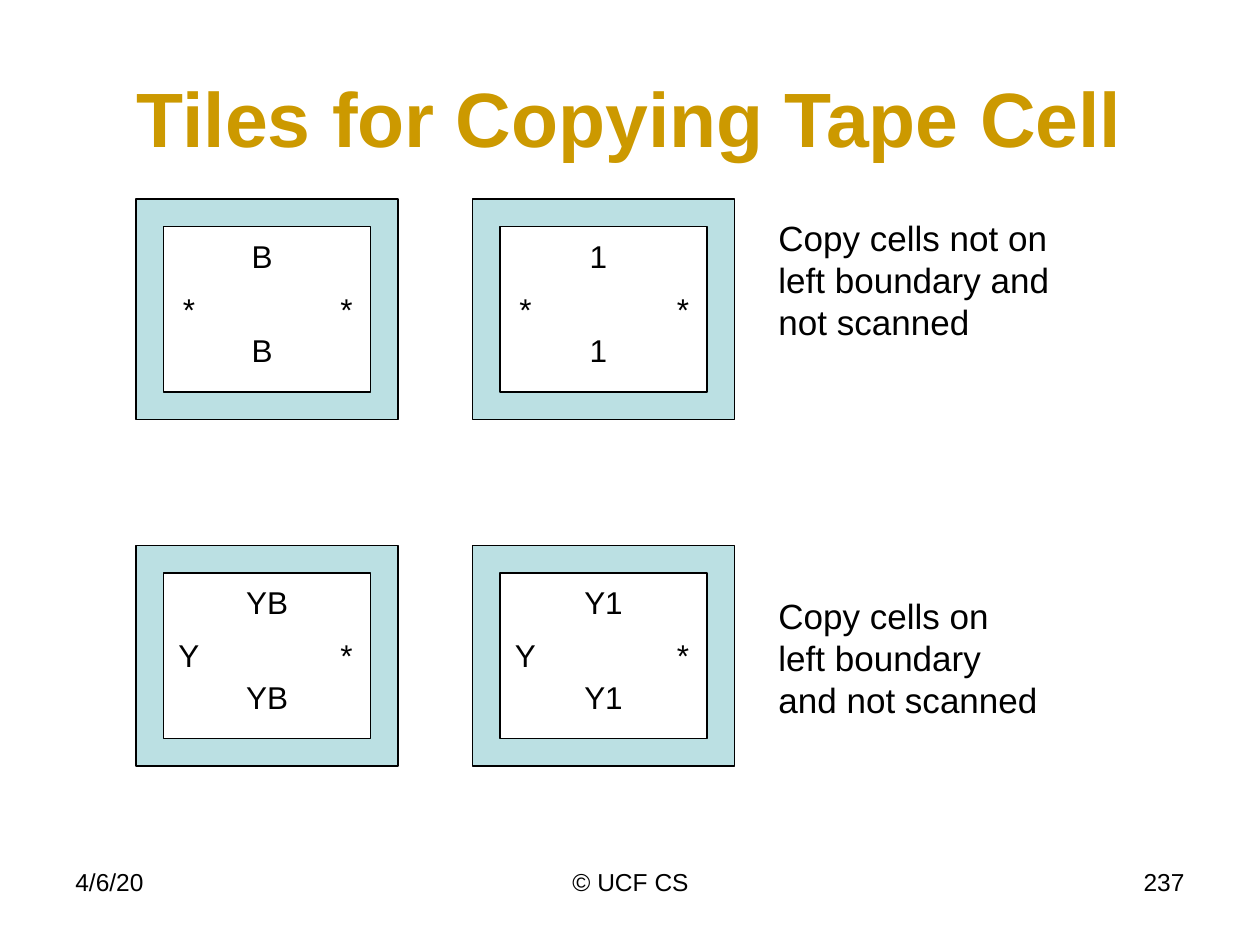
from pptx import Presentation
from pptx.dml.color import RGBColor
from pptx.enum.shapes import MSO_SHAPE
from pptx.enum.text import MSO_ANCHOR, MSO_AUTO_SIZE, PP_ALIGN
from pptx.util import Inches, Pt

GOLD = RGBColor(0xCC, 0x99, 0x00)
PALE_TEAL = RGBColor(0xBB, 0xE0, 0xE3)
BLACK = RGBColor(0, 0, 0)
LEFT, CENTER, RIGHT = PP_ALIGN.LEFT, PP_ALIGN.CENTER, PP_ALIGN.RIGHT
FRAME = MSO_SHAPE.FRAME
MIDDLE = MSO_ANCHOR.MIDDLE
NO_FIT, GROW = MSO_AUTO_SIZE.NONE, MSO_AUTO_SIZE.SHAPE_TO_FIT_TEXT
TITLE_ONLY = 5

TILE_COLUMNS = (1.08, 3.75)
# Tile top, side marks, labels, offset and width of the labels, note
TILE_ROWS = (
    (1.58, ("*", "*"), ("B", "1"), (0.75, 0.5),
     (6.08, 1.67, 2.44, 1.11),
     ("Copy cells not on", "left boundary and \vnot scanned")),
    (4.33, ("Y", "*"), ("YB", "Y1"), (0.25, 1.58),
     (6.08, 4.67, 2.27, 1.11),
     ("Copy cells on", "left boundary", "and not scanned")),
)
FOOTER_PARTS = (
    (0, 2.33, "4/6/20", LEFT),
    (2.92, 3.17, "© UCF CS", CENTER),
    (6.67, 2.33, "237", RIGHT),
)


def write_lines(frame, lines, size, align, color=BLACK, bold=False):
    font_format = {"name": "Arial", "size": Pt(size), "bold": bold}
    for index, line in enumerate(lines):
        paragraph = frame.add_paragraph() if index else frame.paragraphs[0]
        paragraph.text = line
        paragraph.alignment = align
        for key, value in font_format.items():
            setattr(paragraph.font, key, value)
        paragraph.font.color.rgb = color


def add_text(slide, box, lines, size, align, wrap=True, fit=GROW):
    frame = slide.shapes.add_textbox(*map(Inches, box)).text_frame
    frame.word_wrap = wrap
    frame.auto_size = fit
    write_lines(frame, lines, size, align)


def add_title(slide, box, text):
    title = slide.shapes.title
    edges = ("left", "top", "width", "height")
    for edge, length in zip(edges, box):
        setattr(title, edge, Inches(length))
    title.text_frame.auto_size = NO_FIT
    title.text_frame.vertical_anchor = MIDDLE
    write_lines(title.text_frame, [text], 44, CENTER, GOLD, bold=True)


def add_tile(slide, box, sides, label, label_span):
    """Draw a frame with marks on its sides and one label above and below."""
    left, top, _, _ = box
    border = slide.shapes.add_shape(FRAME, *map(Inches, box))
    border.shadow.inherit = False
    border.fill.solid()
    border.fill.fore_color.rgb = PALE_TEAL
    border.line.color.rgb = BLACK
    border.line.width = Pt(0.75)

    label_dx, label_width = label_span
    marks = (
        (label_dx, 0.25, label_width, label),
        (1.42, 0.67, 0.5, sides[1]),
        (0.17, 0.67, 0.5, sides[0]),
        (label_dx, 1, label_width, label),
    )
    for dx, dy, width, mark in marks:
        add_text(slide, (left + dx, top + dy, width, 0.5), [mark], 18, CENTER)


def add_footer(slide, box):
    left, top, _, height = box
    for dx, width, text, align in FOOTER_PARTS:
        add_text(slide, (left + dx, top, width, height), [text], 14, align,
                 fit=NO_FIT)


def main():
    prs = Presentation()
    prs.slide_width, prs.slide_height = Inches(10), Inches(7.5)
    slide = prs.slides.add_slide(prs.slide_layouts[TITLE_ONLY])
    add_title(slide, (0.5, 0.3, 9, 1.25), "Tiles for Copying Tape Cell")
    for top, sides, labels, label_span, note_box, note in TILE_ROWS:
        for left, label in zip(TILE_COLUMNS, labels):
            add_tile(slide, (left, top, 2.08, 1.75), sides, label, label_span)
        add_text(slide, note_box, note, 20, LEFT, wrap=False)
    add_footer(slide, (0.5, 6.83, 9, 0.52))
    prs.save("out.pptx")


if __name__ == "__main__":
    main()
